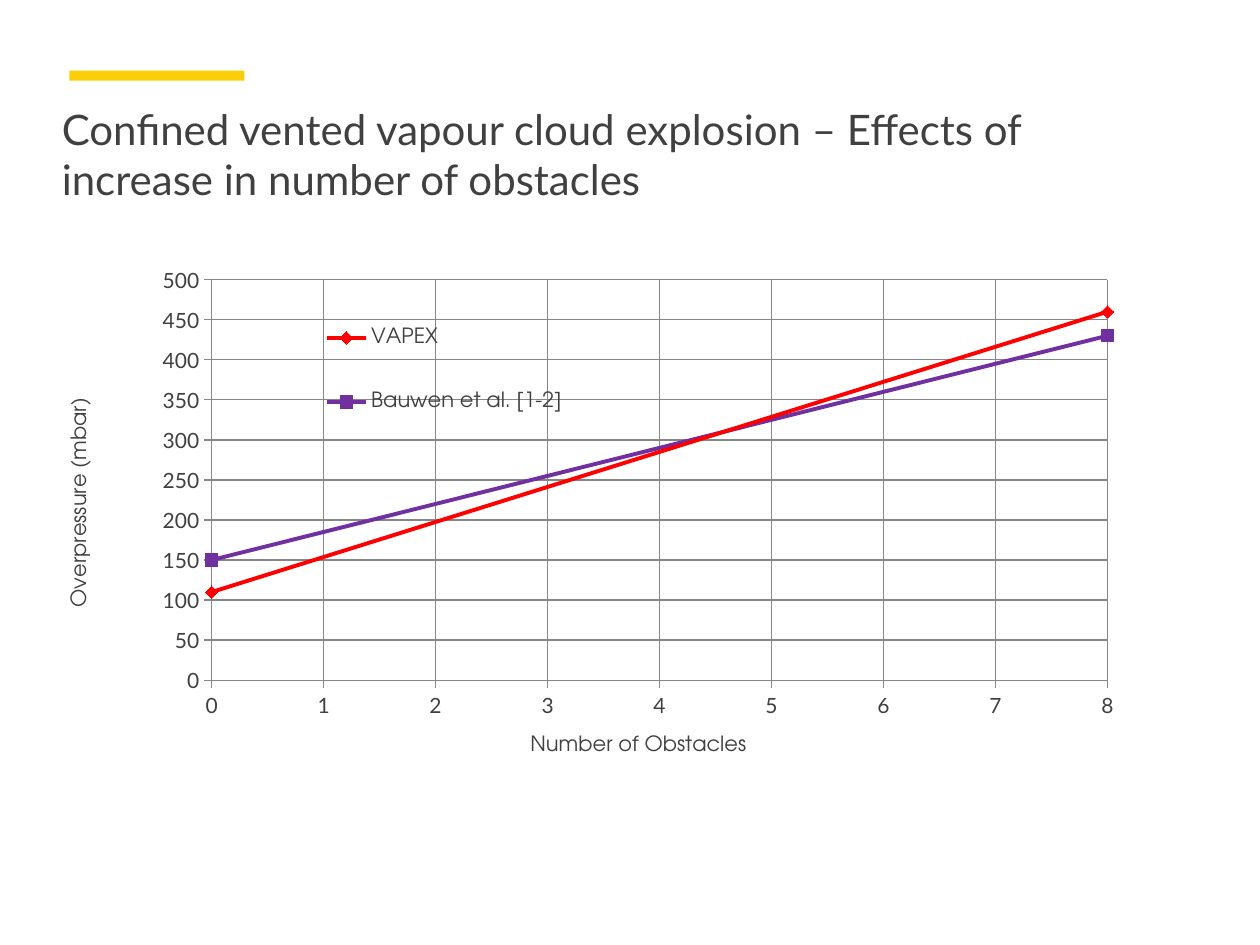
import pptx
import pptx.chart.data
import pptx.dml.color
import pptx.enum.chart
import pptx.enum.shapes
import pptx.enum.text
import pptx.oxml
import pptx.oxml.ns
import pptx.util
from pptx.util import Inches

RGBColor = pptx.dml.color.RGBColor
YELLOW = RGBColor(0xFB, 0xCE, 0x07)
INK = RGBColor(0x40, 0x40, 0x40)
GRID = RGBColor(0x86, 0x86, 0x86)
RED = RGBColor(0xFF, 0x00, 0x00)
PURPLE = RGBColor(0x70, 0x30, 0xA0)

BODY_FONT = "Lato"
LABEL_FONT = "TeX Gyre Adventor"

MARKERS = pptx.enum.chart.XL_MARKER_STYLE
SERIES = [
    ("VAPEX", [(0, 110), (8, 460)], RED, MARKERS.DIAMOND),
    ("Bauwen et al. [1-2]", [(0, 150), (8, 430)], PURPLE, MARKERS.SQUARE),
]


def style_font(font, name=BODY_FONT, size=12, color=INK, bold=False):
    font.name = name
    font.size = pptx.util.Pt(size)
    font.bold = bold
    font.color.rgb = color


def write_text(frame, text, **style):
    para = frame.paragraphs[0]
    span = para.add_run()
    span.text = text
    style_font(span.font, **style)
    return para


def place_part(element, chart_size, place, after=None, inner=False):
    """Set a chart part's manual layout from lengths within the chart."""
    qn = pptx.oxml.ns.qn
    for old in element.findall(qn("c:layout")):
        element.remove(old)
    entries = [("layoutTarget", "inner")] if inner else []
    entries += [("xMode", "edge"), ("yMode", "edge")]
    entries += [(key, length / whole)
                for key, length, whole in zip("xywh", place, chart_size * 2)]
    body = "".join(f'<c:{tag} val="{value}"/>' for tag, value in entries)
    layout = pptx.oxml.parse_xml(
        f'<c:layout {pptx.oxml.ns.nsdecls("c")}>'
        f'<c:manualLayout>{body}</c:manualLayout></c:layout>')
    if after:
        element.find(qn(after)).addnext(layout)
    else:
        element.insert(0, layout)


def add_accent_bar(page, left, top, width, height):
    bar = page.shapes.add_shape(
        pptx.enum.shapes.MSO_SHAPE.RECTANGLE, left, top, width, height)
    bar.shadow.inherit = False
    bar.fill.solid()
    bar.fill.fore_color.rgb = YELLOW
    bar.line.fill.background()


def place_title(page, text, left, top, width, height):
    title = page.shapes.title
    title.left, title.top, title.width, title.height = left, top, width, height
    frame = title.text_frame
    frame.margin_left = frame.margin_right = frame.margin_top = frame.margin_bottom = 0
    frame.word_wrap = True
    frame.auto_size = pptx.enum.text.MSO_AUTO_SIZE.NONE
    frame.vertical_anchor = pptx.enum.text.MSO_ANCHOR.TOP
    para = write_text(frame, text, size=24)
    para.alignment = pptx.enum.text.PP_ALIGN.LEFT


def format_axis(axis, title, maximum, step, chart_size, place):
    axis.minimum_scale, axis.maximum_scale, axis.major_unit = 0, maximum, step
    axis.major_tick_mark = pptx.enum.chart.XL_TICK_MARK.OUTSIDE
    axis.has_major_gridlines = True
    for line in (axis.format.line, axis.major_gridlines.format.line):
        line.color.rgb = GRID
        line.width = pptx.util.Pt(0.75)
    style_font(axis.tick_labels.font)
    write_text(axis.axis_title.text_frame, title, name=LABEL_FONT)
    place_part(axis.axis_title._element, chart_size, place, after="c:tx")


def format_series(series, color, marker):
    series.smooth = False
    series.format.line.color.rgb = color
    series.format.line.width = pptx.util.Pt(2.25)
    series.marker.style = marker
    series.marker.size = 7
    series.marker.format.fill.solid()
    series.marker.format.fill.fore_color.rgb = color
    series.marker.format.line.color.rgb = color


def add_legend(chart, chart_size, place):
    chart.has_legend = True
    legend = chart.legend
    legend.position = pptx.enum.chart.XL_LEGEND_POSITION.RIGHT
    legend.include_in_layout = False
    style_font(legend.font, name=LABEL_FONT)
    place_part(legend._element, chart_size, place, after="c:legendPos")


def add_overpressure_chart(page, left, top, width, height):
    data = pptx.chart.data.XyChartData()
    for name, points, _, _ in SERIES:
        entry = data.add_series(name)
        for x, y in points:
            entry.add_data_point(x, y)
    chart = page.shapes.add_chart(
        pptx.enum.chart.XL_CHART_TYPE.XY_SCATTER_LINES,
        left, top, width, height, data).chart
    chart.has_title = False
    style_font(chart.font, size=10)
    plot = chart.plots[0]
    plot.vary_by_categories = False
    for series, (_, _, color, marker) in zip(plot.series, SERIES):
        format_series(series, color, marker)

    size = (width, height)
    format_axis(chart.category_axis, "Number of Obstacles", 8, 1,
                size, (Inches(3.69), Inches(3.74)))
    format_axis(chart.value_axis, "Overpressure (mbar)", 500, 50,
                size, (Inches(0.02), Inches(1.08)))
    add_legend(chart, size, (Inches(1.91), Inches(0.2), Inches(2.25), Inches(1.37)))
    place_part(plot._element.getparent(), size,
               (Inches(1.19), Inches(0.17), Inches(7.11), Inches(3.18)), inner=True)


def main():
    deck = pptx.Presentation()
    deck.slide_width, deck.slide_height = Inches(10), Inches(7.5)
    page = deck.slides.add_slide(deck.slide_layouts[5])
    add_accent_bar(page, Inches(0.55), Inches(0.56), Inches(1.39), Inches(0.08))
    add_overpressure_chart(page, Inches(0.49), Inches(2.05), Inches(8.65), Inches(4.05))
    place_title(
        page,
        "Confined vented vapour cloud explosion – Effects of increase in number of obstacles",
        Inches(0.49), Inches(0.82), Inches(8.9), Inches(0.83))
    deck.save("out.pptx")


if __name__ == "__main__":
    main()
